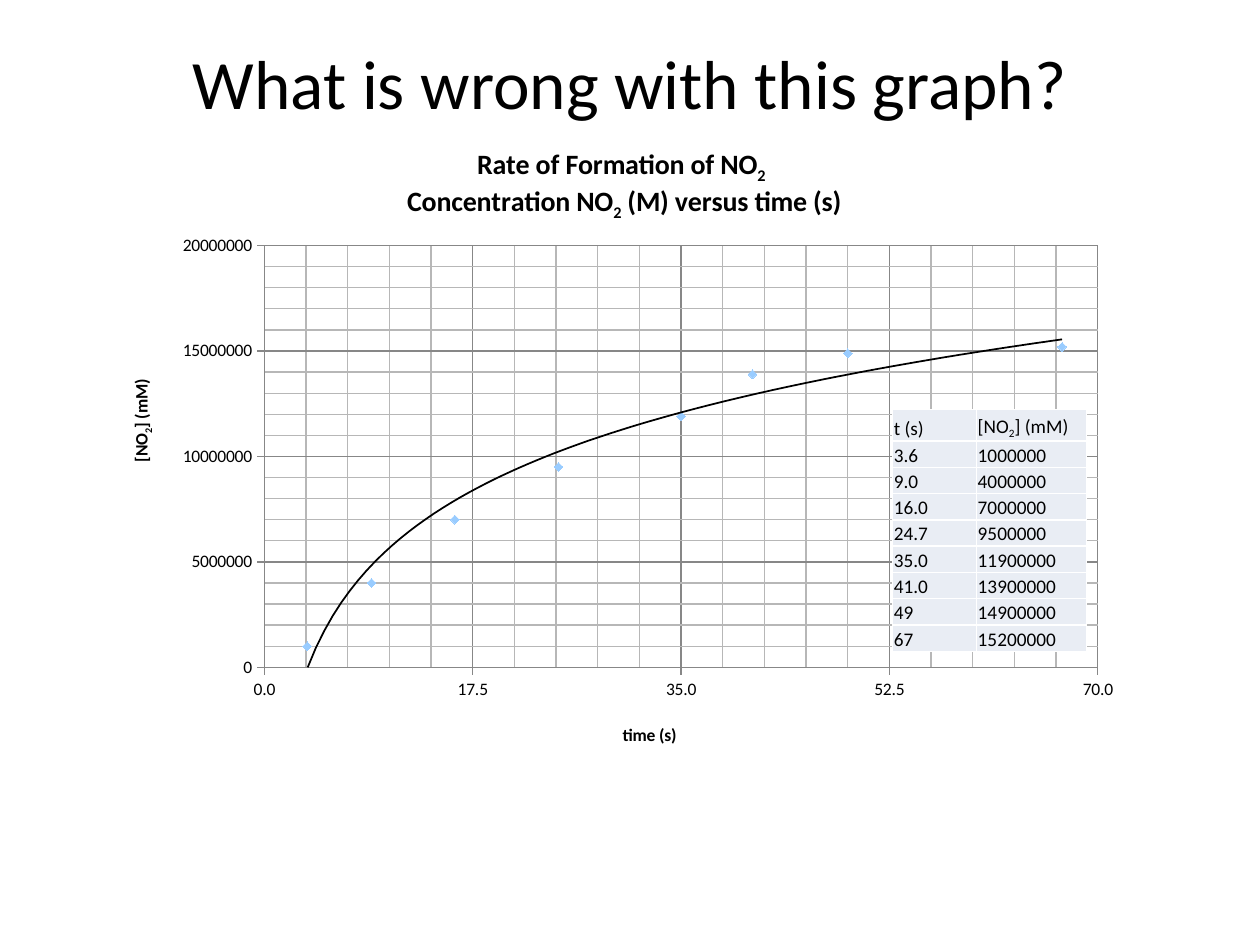
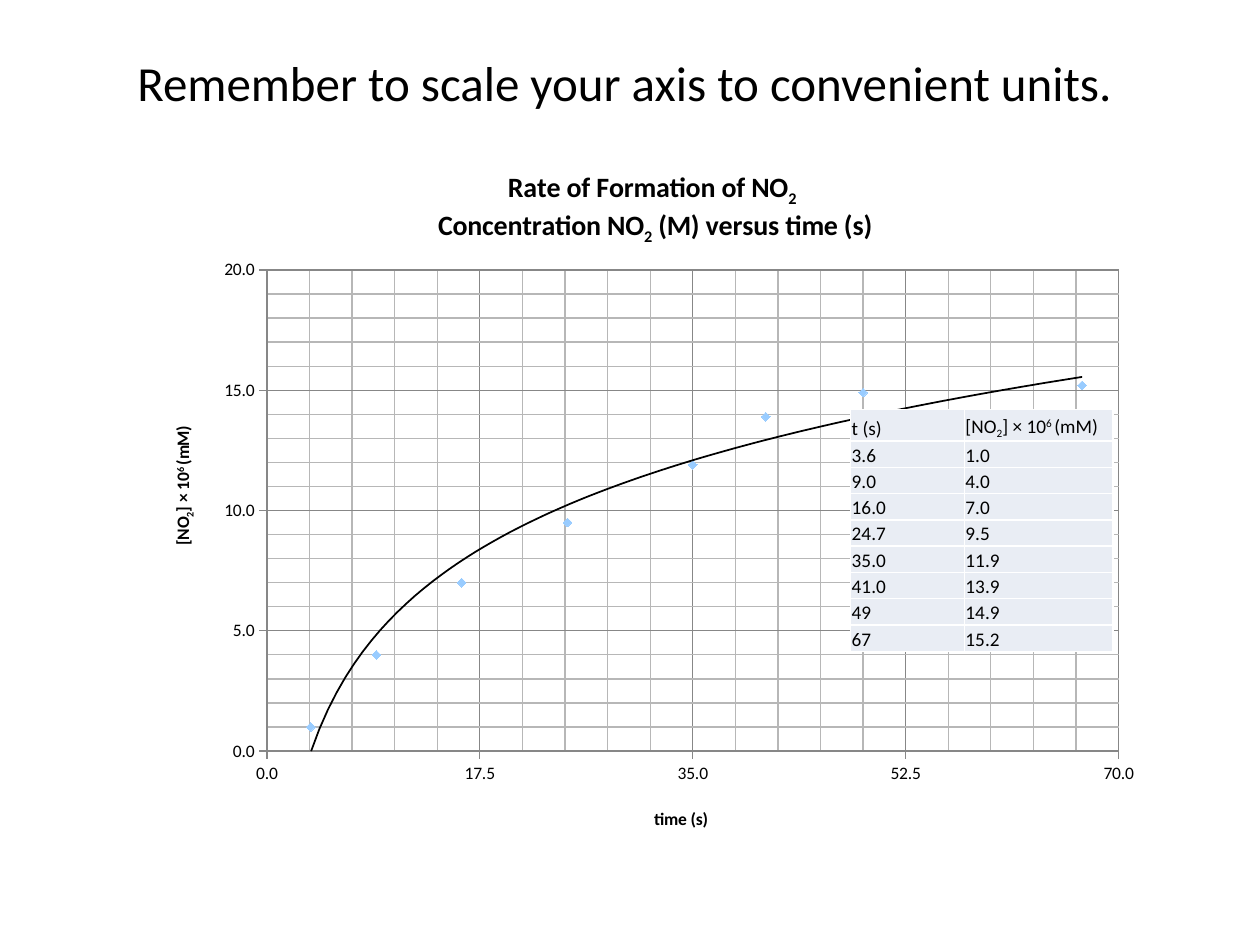
from dataclasses import dataclass
from typing import NamedTuple

from lxml.etree import SubElement
from pptx import Presentation
from pptx.chart.data import XyChartData
from pptx.dml.color import RGBColor
from pptx.enum.chart import XL_CHART_TYPE, XL_MARKER_STYLE, XL_TICK_MARK
from pptx.enum.text import MSO_ANCHOR, PP_ALIGN
from pptx.oxml import parse_xml
from pptx.oxml.ns import nsdecls, qn
from pptx.util import Pt

FONT = "Calibri"
BLACK, WHITE = "000000", "FFFFFF"
MAJOR_GRID, MINOR_GRID = "878787", "B7B7B7"
MARKER, CELL = "99CCFF", "E9EDF4"
MINOR_PER_MAJOR = 5


class Span(NamedTuple):
    text: str
    baseline: int = 0  # percent: negative is subscript


class Box(NamedTuple):
    left: float
    top: float
    width: float
    height: float


@dataclass
class GraphSlide:
    title: str
    title_size: float
    chart_box: Box
    plot_area: Box  # fractions of the chart, as are the two-number places
    chart_title_at: tuple[float, float]
    time_title_at: tuple[float, float]
    amount_title_at: tuple[float, float]
    amount_spans: list[Span]
    scale: int
    number_format: str
    decimals: int
    table_left: float
    columns: tuple[float, float]


TITLE_BOX = Box(36, 21.6, 648, 50.4)
TABLE_TOP, HEADER_HEIGHT, ROW_HEIGHT = 234, 18, 15.03

TIMES = ["3.6", "9.0", "16.0", "24.7", "35.0", "41.0", "49", "67"]
AMOUNTS = [1.0, 4.0, 7.0, 9.5, 11.9, 13.9, 14.9, 15.2]  # millions of mM

SUB_TWO = Span("2", -25)
CHART_TITLE = [
    [Span("Rate of Formation of NO"), SUB_TWO, Span(" ")],
    [Span("Concentration NO"), SUB_TWO, Span(" (M) versus time (s)")],
]

GRAPHS = [
    GraphSlide(
        "What is wrong with this graph?", 39.6,
        Box(60, 66, 588, 372), Box(0.155, 0.2, 0.81, 0.648),
        (0.29, 0.04), (0.5, 0.93), (0.02, 0.4),
        [Span("[NO"), SUB_TWO, Span("] (mM)")],
        1_000_000, "0", 0, 510, (48, 63),
    ),
    GraphSlide(
        "Remember to scale your axis to convenient units. ", 28,
        Box(84, 78, 576, 408), Box(0.119, 0.187, 0.845, 0.674),
        (0.285, 0.04), (0.5, 0.935), (0.02, 0.4),
        [Span("[NO"), SUB_TWO, Span("] × 10"), Span("6 ", 30), Span("(mM)")],
        1, "0.0", 1, 486, (65, 85),
    ),
]


def color(value: str) -> RGBColor:
    return RGBColor.from_string(value)


def add_spans(para, spans: list[Span], size: float, bold: bool = False) -> None:
    for span in spans:
        run = para.add_run()
        run.text = span.text
        run.font.name, run.font.size, run.font.bold = FONT, Pt(size), bold
        run.font.color.rgb = color(BLACK)
        if span.baseline:
            run.font._element.set("baseline", str(span.baseline * 1000))


def set_layout(parent, index: int, **places: float) -> None:
    """Give a chart part a manual layout, as fractions of the chart."""
    for old in parent.findall(qn("c:layout")):
        parent.remove(old)
    layout = parse_xml(f"<c:layout {nsdecls('c')}><c:manualLayout/></c:layout>")
    for name, value in places.items():
        SubElement(layout[0], qn(f"c:{name}")).set("val", str(value))
    parent.insert(index, layout)


def place_title(title, at: tuple[float, float]) -> None:
    set_layout(title._element, 1, xMode="edge", yMode="edge", x=at[0], y=at[1])


def line_xml(fill: str, width: float) -> str:
    return (f'<c:spPr><a:ln w="{Pt(width)}"><a:solidFill><a:srgbClr val="{fill}"/>'
            f'</a:solidFill></a:ln></c:spPr>')


def format_axis(axis, spans: list[Span], at: tuple[float, float],
                maximum: float, major: float, number_format: str) -> None:
    axis.minimum_scale, axis.maximum_scale = 0, maximum
    axis.major_unit, axis.minor_unit = major, major / MINOR_PER_MAJOR
    axis.major_tick_mark, axis.minor_tick_mark = XL_TICK_MARK.OUTSIDE, XL_TICK_MARK.NONE
    axis.tick_labels.number_format = number_format
    axis.tick_labels.number_format_is_linked = False
    axis.has_major_gridlines = axis.has_minor_gridlines = True
    for line in (axis.format.line, axis.major_gridlines.format.line):
        line.color.rgb, line.width = color(MAJOR_GRID), Pt(0.75)
    minor_lines = axis._element.find(qn("c:minorGridlines"))
    grid = parse_xml(f"<c:minorGridlines {nsdecls('c', 'a')}>"
                     f"{line_xml(MINOR_GRID, 0.75)}</c:minorGridlines>")
    axis._element.replace(minor_lines, grid)
    add_spans(axis.axis_title.text_frame.paragraphs[0], spans, 10, bold=True)
    place_title(axis.axis_title, at)


def add_graph(page, graph: GraphSlide) -> None:
    data = XyChartData()
    points = data.add_series("Series 1")
    for time, amount in zip(TIMES, AMOUNTS):
        points.add_data_point(float(time), round(amount * graph.scale, 1))
    frame = page.shapes.add_chart(
        XL_CHART_TYPE.XY_SCATTER, *map(Pt, graph.chart_box), data)
    chart = frame.chart
    chart.has_legend = False
    chart.font.name, chart.font.size = FONT, Pt(10)
    chart.font.color.rgb = color(BLACK)
    plot = graph.plot_area
    set_layout(chart._chartSpace.chart.plotArea, 0, layoutTarget="inner",
               xMode="edge", yMode="edge",
               x=plot.left, y=plot.top, w=plot.width, h=plot.height)

    # Chart title
    text = chart.chart_title.text_frame
    for number, spans in enumerate(CHART_TITLE):
        para = text.add_paragraph() if number else text.paragraphs[0]
        add_spans(para, spans, 16, bold=True)
    place_title(chart.chart_title, graph.chart_title_at)

    # Axes
    format_axis(chart.category_axis, [Span("time (s)")], graph.time_title_at,
                70, 17.5, "0.0")
    format_axis(chart.value_axis, graph.amount_spans, graph.amount_title_at,
                20 * graph.scale, 5 * graph.scale, graph.number_format)
    amount_body = chart.value_axis.axis_title.text_frame._txBody.bodyPr
    amount_body.set("rot", "-5400000")
    amount_body.set("vert", "horz")

    # Markers and logarithmic trend line
    chart.plots[0].vary_by_categories = False
    series = chart.plots[0].series[0]
    series.format.line.fill.background()
    series.marker.style, series.marker.size = XL_MARKER_STYLE.DIAMOND, 5
    series.marker.format.fill.solid()
    series.marker.format.fill.fore_color.rgb = color(MARKER)
    series.marker.format.line.color.rgb = color(MARKER)
    series._element.find(qn("c:xVal")).addprevious(parse_xml(
        f"<c:trendline {nsdecls('c', 'a')}>{line_xml(BLACK, 1)}"
        '<c:trendlineType val="log"/><c:dispRSqr val="0"/><c:dispEq val="0"/>'
        "</c:trendline>"))


def fill_cell(cell, spans: list[Span]) -> None:
    cell.margin_left = cell.margin_right = cell.margin_top = Pt(0.72)
    cell.margin_bottom = 0
    cell.vertical_anchor = MSO_ANCHOR.BOTTOM
    cell.fill.solid()
    cell.fill.fore_color.rgb = color(CELL)
    add_spans(cell.text_frame.paragraphs[0], spans, 11)
    properties = cell._tc.get_or_add_tcPr()
    for index, side in enumerate(("lnL", "lnR", "lnT", "lnB")):
        properties.insert(index, parse_xml(
            f'<a:{side} {nsdecls("a")} w="{Pt(1)}"><a:solidFill>'
            f'<a:srgbClr val="{WHITE}"/></a:solidFill></a:{side}>'))


def add_data_table(page, graph: GraphSlide) -> None:
    rows = [([Span("t (s)")], graph.amount_spans)]
    for time, amount in zip(TIMES, AMOUNTS):
        label = f"{amount * graph.scale:.{graph.decimals}f}"
        rows.append(([Span(time)], [Span(label)]))
    height = HEADER_HEIGHT + ROW_HEIGHT * len(TIMES)
    table = page.shapes.add_table(
        len(rows), 2, Pt(graph.table_left), Pt(TABLE_TOP),
        Pt(sum(graph.columns)), Pt(height)).table
    for column, width in zip(table.columns, graph.columns):
        column.width = Pt(width)
    for number, row in enumerate(rows):
        table.rows[number].height = Pt(ROW_HEIGHT if number else HEADER_HEIGHT)
        for column, spans in enumerate(row):
            fill_cell(table.cell(number, column), spans)


def add_title(page, graph: GraphSlide) -> None:
    title = page.shapes.title
    title.left, title.top, title.width, title.height = map(Pt, TITLE_BOX)
    title.text_frame.vertical_anchor = MSO_ANCHOR.MIDDLE
    para = title.text_frame.paragraphs[0]
    para.alignment = PP_ALIGN.CENTER
    add_spans(para, [Span(graph.title)], graph.title_size)


def main() -> None:
    deck = Presentation()
    deck.slide_width, deck.slide_height = Pt(720), Pt(540)
    title_only = deck.slide_layouts[5]
    for graph in GRAPHS:
        page = deck.slides.add_slide(title_only)
        add_title(page, graph)
        add_graph(page, graph)
        add_data_table(page, graph)
    deck.save("out.pptx")


if __name__ == "__main__":
    main()
